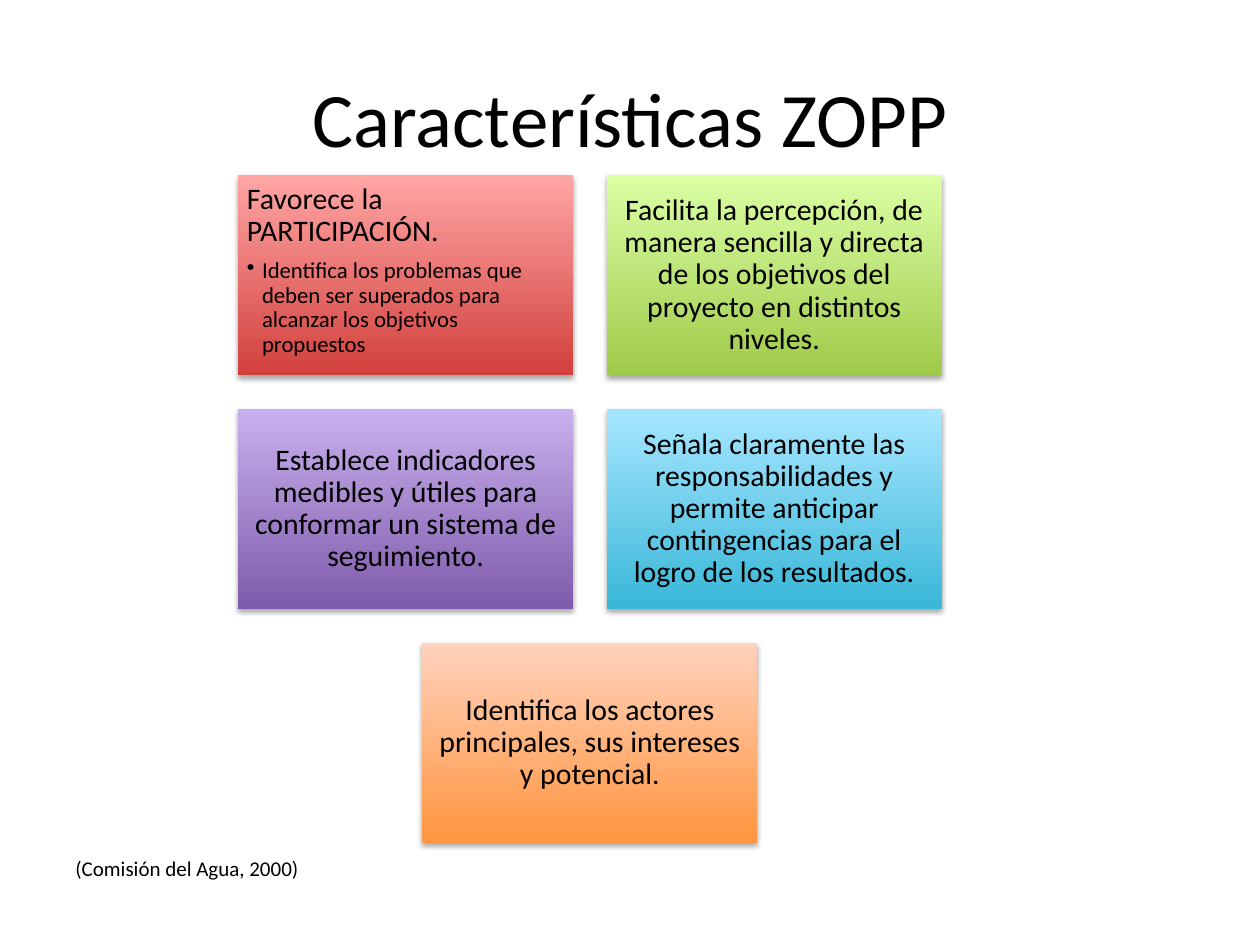
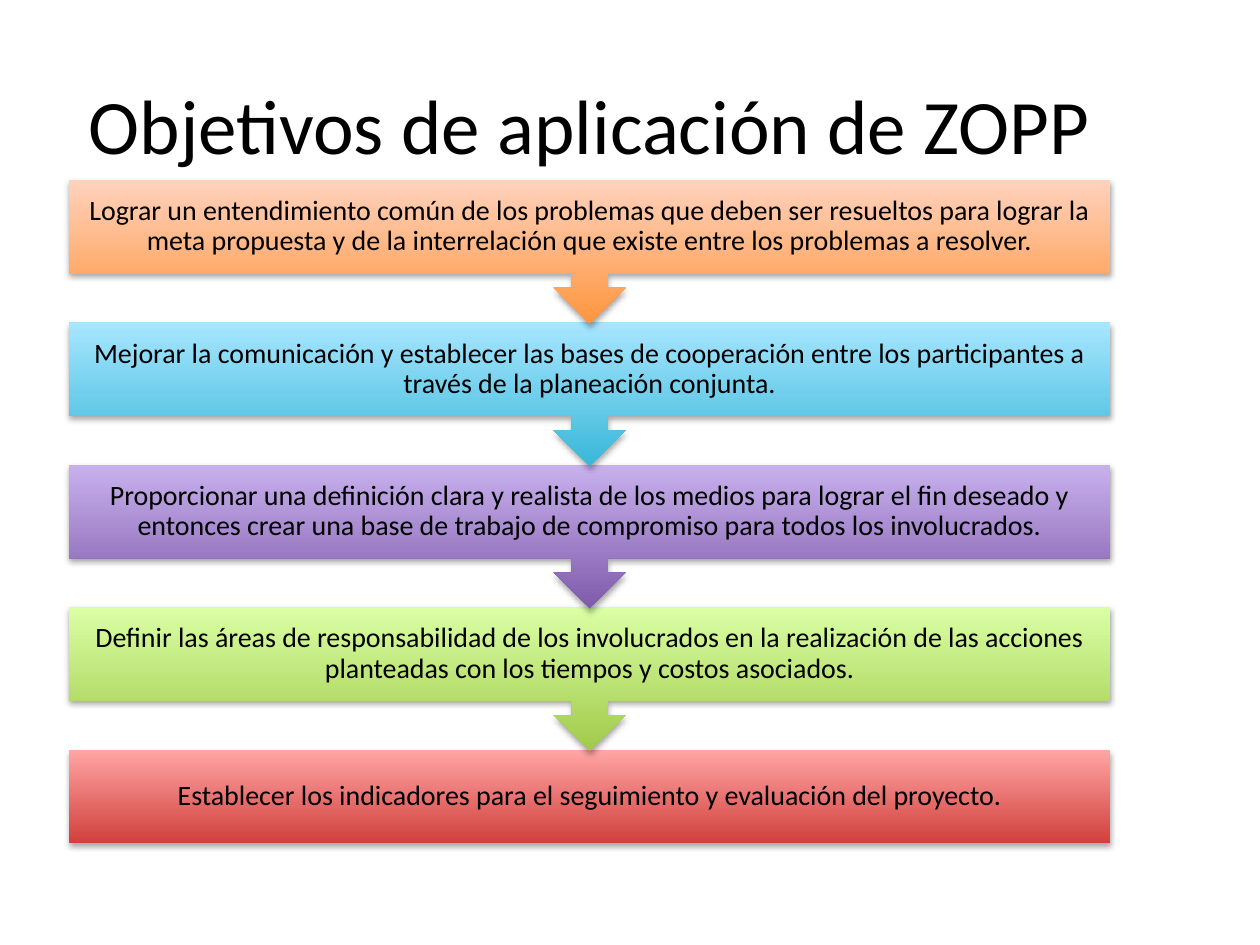
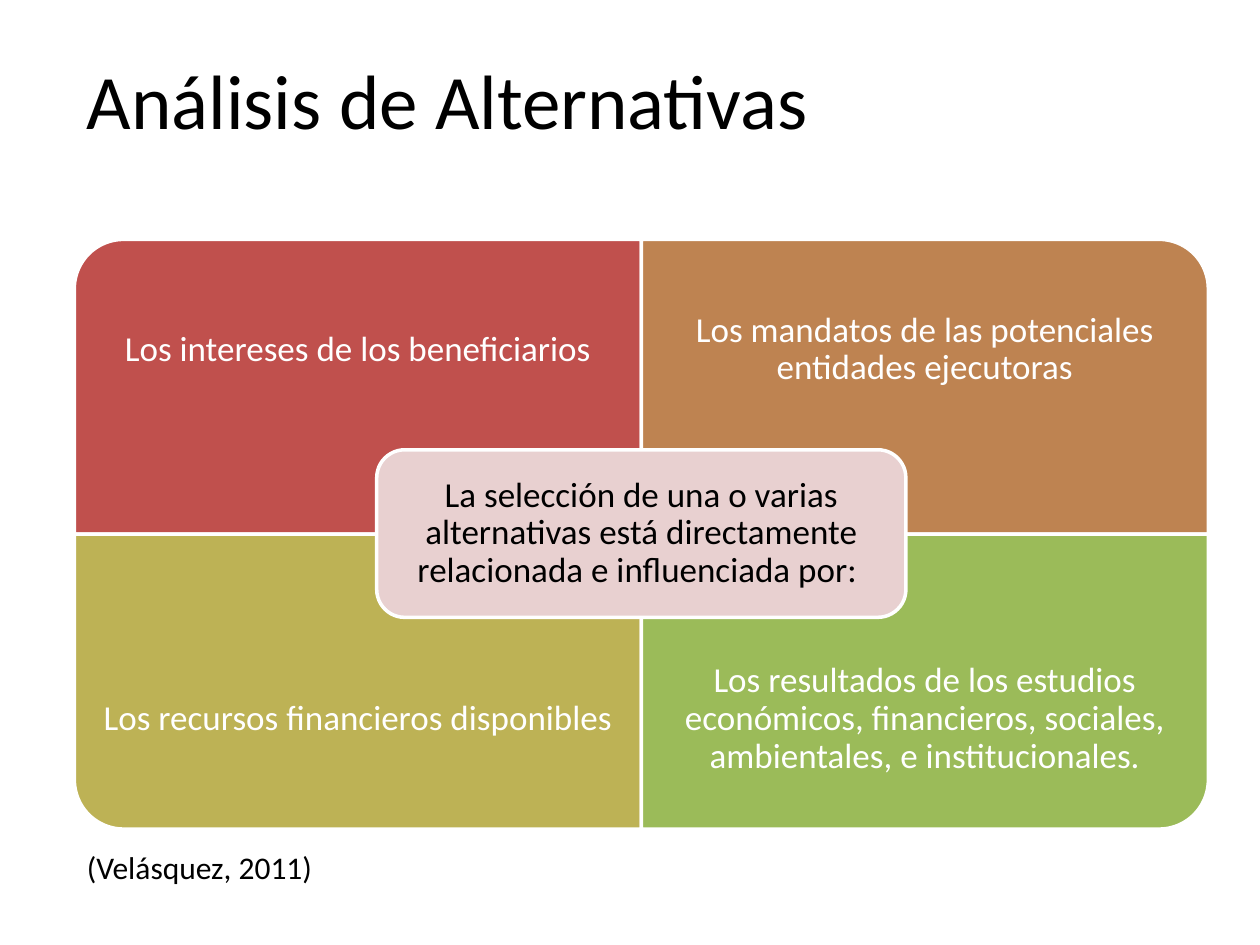
from lxml import etree
from pptx import Presentation
from pptx import util as u
from pptx.dml.color import RGBColor
from pptx.enum import shapes, text
from pptx.oxml.ns import qn

COLORS = {
    "ink": "000000", "paper": "FFFFFF",
    "red": "C0504D", "brown": "BE8351", "olive": "BDB255", "green": "9BBB59", "rose": "E8D0D0",
}
GRADIENTS = {
    "red": ("D1403C", "FFA6A5"),
    "green": ("A0CA4A", "DAFFA5"),
    "purple": ("7F5BAB", "C8B0ED"),
    "blue": ("39B7D8", "A7E6FF"),
    "orange": ("FF953E", "FFD2BD"),
}
FONT = "Calibri"
COLUMNS, ROWS = 100, 75
LEFT, CENTER, JUSTIFY = text.PP_ALIGN.LEFT, text.PP_ALIGN.CENTER, text.PP_ALIGN.JUSTIFY
TOP, MIDDLE = text.MSO_ANCHOR.TOP, text.MSO_ANCHOR.MIDDLE
KINDS = shapes.MSO_SHAPE

CARDS = [
    ("red", None),
    ("green", "Facilita la percepción, de manera sencilla y directa de los objetivos del proyecto "
              "en distintos niveles."),
    ("purple", "Establece indicadores medibles y útiles para conformar un sistema de seguimiento."),
    ("blue", "Señala claramente las responsabilidades y permite anticipar contingencias para el "
             "logro de los resultados."),
    ("orange", "Identifica los actores principales, sus intereses y potencial."),
]
STEPS = [
    ("orange", "Lograr un entendimiento común de los problemas que deben ser resueltos para lograr la "
               "meta propuesta y de la interrelación que existe entre los problemas a resolver."),
    ("blue", "Mejorar la comunicación y establecer las bases de cooperación entre los participantes a "
             "través de la planeación conjunta."),
    ("purple", "Proporcionar una definición clara y realista de los medios para lograr el fin deseado y "
               "entonces crear una base de trabajo de compromiso para todos los involucrados."),
    ("green", "Definir las áreas de responsabilidad de los involucrados en la realización de las acciones "
              "planteadas con los tiempos y costos asociados."),
    ("red", "Establecer los indicadores para el seguimiento y evaluación del proyecto."),
]
QUADRANTS = [
    ("red", 270, "Los intereses de los beneficiarios"),
    ("brown", 0, "Los mandatos de las potenciales entidades ejecutoras"),
    ("olive", 180, "Los recursos financieros disponibles"),
    ("green", 90, "Los resultados de los estudios económicos, financieros, sociales, ambientales, "
                  "e institucionales."),
]


class Board:
    """Holds the shared style and draws elements on the current slide."""

    def __init__(self):
        self.deck = Presentation()
        self.deck.slide_width, self.deck.slide_height = u.Inches(10), u.Inches(7.5)
        self.page = None

    def new_page(self):
        self.page = self.deck.slides.add_slide(self.deck.slide_layouts[6])

    def place(self, left, top, width, height):
        column, row = self.deck.slide_width / COLUMNS, self.deck.slide_height / ROWS
        return [round(n) for n in (left * column, top * row, width * column, height * row)]

    def frame(self, box, inset=None, anchor=MIDDLE, wrap=True):
        frame = box.text_frame
        frame.word_wrap, frame.vertical_anchor = wrap, anchor
        if inset is not None:
            frame.margin_left = frame.margin_right = u.Inches(inset)
            frame.margin_top = frame.margin_bottom = u.Inches(inset)
        return frame

    def fill_para(self, para, words, size, color="ink", align=CENTER, spacing=0.9):
        para.alignment, para.line_spacing = align, spacing
        span = para.add_run()
        span.text = words
        span.font.name, span.font.size = FONT, u.Pt(size)
        span.font.color.rgb = RGBColor.from_string(COLORS[color])

    def label(self, area, words, size, color="ink", align=CENTER, inset=None, spacing=0.9):
        box = self.page.shapes.add_textbox(*self.place(*area))
        self.fill_para(self.frame(box, inset).paragraphs[0], words, size, color, align, spacing)

    def title(self, area, words, align=CENTER):
        self.label(area, words, 44, align=align, spacing=1)

    def citation(self, area, words, size):
        box = self.page.shapes.add_textbox(*self.place(*area))
        frame = self.frame(box, anchor=TOP, wrap=False)
        frame.auto_size = text.MSO_AUTO_SIZE.SHAPE_TO_FIT_TEXT
        self.fill_para(frame.paragraphs[0], words, size, align=LEFT, spacing=1)

    def glossy(self, kind, area, gradient):
        shape = self.page.shapes.add_shape(kind, *self.place(*area))
        shape.fill.gradient()
        shape.fill.gradient_angle = 90
        for stop, position, color in zip(shape.fill.gradient_stops, (0, 1), GRADIENTS[gradient]):
            stop.position, stop.color.rgb = position, RGBColor.from_string(color)
        shape.line.fill.background()
        self.shade(shape)
        return shape

    def shade(self, shape):
        shape.shadow.inherit = False
        effects = shape._element.spPr.find(qn("a:effectLst"))
        shadow = etree.SubElement(effects, qn("a:outerShdw"), blurRad=str(u.Pt(3.1)),
                                  dist=str(u.Pt(1.8)), dir="5400000", rotWithShape="0")
        color = etree.SubElement(shadow, qn("a:srgbClr"), val=COLORS["ink"])
        etree.SubElement(color, qn("a:alpha"), val="35000")

    def flat(self, kind, area, color, turn=0):
        left, top, width, height = area
        if turn % 180:
            shift = (width - height) / 2
            left, top, width, height = left + shift, top - shift, height, width
        shape = self.page.shapes.add_shape(kind, *self.place(left, top, width, height))
        shape.rotation = turn
        shape.shadow.inherit = False
        shape.fill.solid()
        shape.fill.fore_color.rgb = RGBColor.from_string(COLORS[color])
        shape.line.color.rgb = RGBColor.from_string(COLORS["paper"])
        shape.line.width = u.Pt(2)
        return shape

    def bullet(self, para, words, size, indent):
        self.fill_para(para, words, size, align=LEFT)
        props = para._p.get_or_add_pPr()
        props.set("marL", str(u.Inches(indent)))
        props.set("indent", str(-u.Inches(indent)))
        etree.SubElement(props, qn("a:buChar"), char="•")


def draw_features(board):
    """Draw the five cards, two to a row with the last one centred."""
    board.new_page()
    board.title((5, 3, 90, 12.5), "Características ZOPP")
    width, height, gap = 26.6, 15.9, 2.65
    for index, (gradient, words) in enumerate(CARDS):
        row, column = divmod(index, 2)
        if index == len(CARDS) - 1:
            column = 0.5
        area = (18.9 + column * (width + gap), 13.9 + row * (height + gap), width, height)
        card = board.glossy(KINDS.RECTANGLE, area, gradient)
        frame = board.frame(card, 0.07, MIDDLE if words else TOP)
        para = frame.paragraphs[0]
        if words:
            board.fill_para(para, words, 17)
        else:
            board.fill_para(para, "Favorece la PARTICIPACIÓN.", 17, align=LEFT)
            para.space_after = u.Pt(6)
            board.bullet(frame.add_paragraph(), "Identifica los problemas que deben ser superados "
                         "para alcanzar los objetivos propuestos", 13, 0.12)
    board.citation((5, 67.4, 19.9, 3), "(Comisión del Agua, 2000)", 12)


def draw_goals(board):
    """Draw the chain of goals from the last step up, so each arrow lies on the next step."""
    board.new_page()
    board.title((5.5, 5.3, 82.6, 9), "Objetivos de aplicación de ZOPP")
    last = len(STEPS) - 1
    for index, (gradient, words) in reversed(list(enumerate(STEPS))):
        kind, height = (KINDS.RECTANGLE, 7.4) if index == last else (KINDS.DOWN_ARROW_CALLOUT, 11.4)
        step = board.glossy(kind, (5.5, 14.3 + index * 11.3, 82.6, height), gradient)
        board.fill_para(board.frame(step, 0.12).paragraphs[0], words, 16)


def draw_alternatives(board):
    """Draw four quadrants around a central statement."""
    board.new_page()
    board.title((5.9, 3.2, 90, 9.3), "Análisis de Alternativas", JUSTIFY)
    left, top, width, height, text_height = 5.9, 19, 45, 23.4, 17.5
    for index, (color, turn, words) in enumerate(QUADRANTS):
        row, column = divmod(index, 2)
        x, y = left + column * width, top + row * height
        board.flat(KINDS.ROUND_1_RECTANGLE, (x, y, width, height), color, turn)
        board.label((x, y + row * (height - text_height), width, text_height), words, 20, "paper", inset=0.16)
    center = board.flat(KINDS.ROUNDED_RECTANGLE, (29.9, 35.7, 42, 13.3), "rose")
    board.fill_para(board.frame(center, 0.08).paragraphs[0],
                    "La selección de una o varias alternativas está directamente relacionada "
                    "e influenciada por: ", 20)
    board.citation((5.9, 66.8, 20.2, 4), "(Velásquez, 2011)", 18)


def main():
    """Build the three slides and save them."""
    board = Board()
    for draw in (draw_features, draw_goals, draw_alternatives):
        draw(board)
    board.deck.save("out.pptx")


if __name__ == "__main__":
    main()
